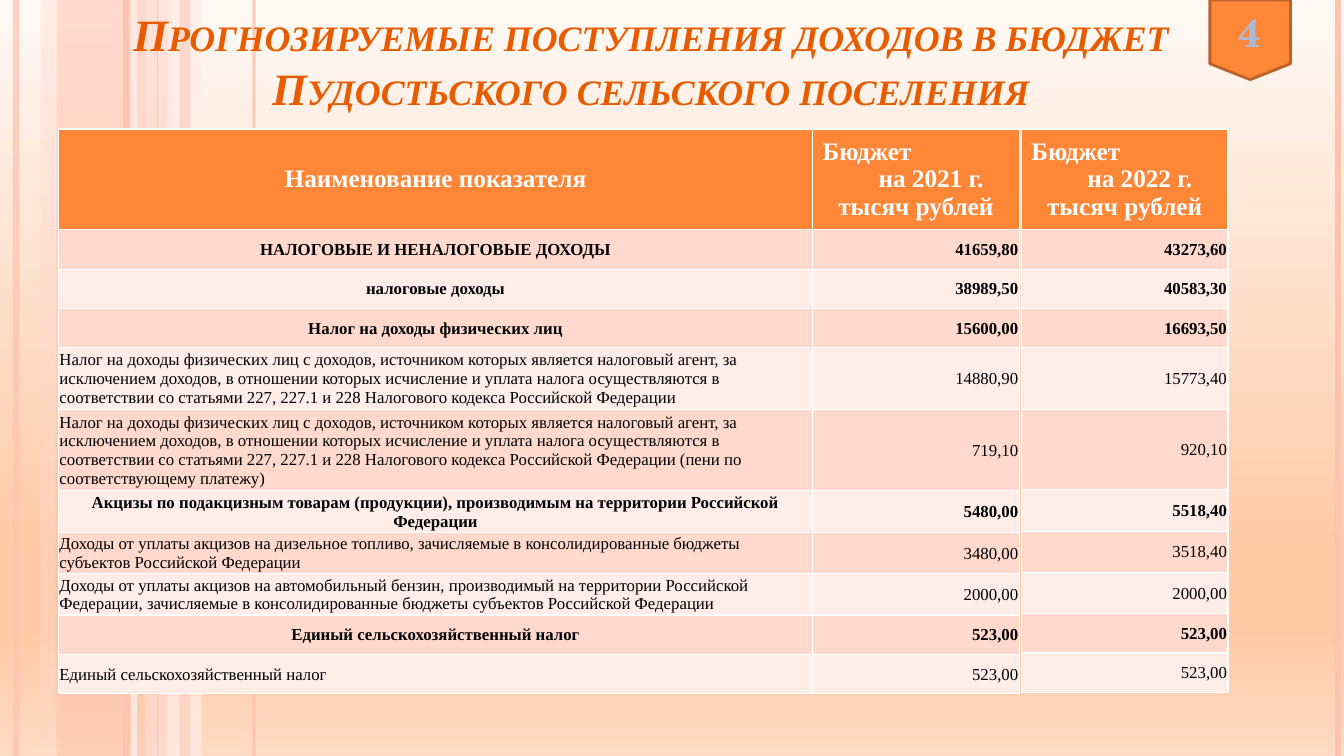
from pptx import Presentation, oxml
from pptx.dml import color
from pptx.enum import shapes, text
from pptx.oxml import ns
from pptx.util import Inches, Pt

COLORS = {
    "orange": "FE8637", "title": "E75C01", "edge": "BC6329", "number": "AEBAD5",
    "rose": "FEC3AE", "pink": "FFD9CE", "pale": "FFEDE8", "white": "FFFFFF", "black": "000000",
}
GRADIENT = [(0, "FFF9F5"), (74, "FFC9A5"), (83, "FFC9A5"), (100, "FFDBC3")]
BANDS = [
    (0.56, 0.89, "rose", 54), (0.4, 0.15, "pink", 36), (1.44, 0.27, "pink", 70),
    (1.66, 0.34, "pale", 71),
]
STRIPES = [
    (0.16, "rose", 4.5, 73), (1.33, "pale", 4.5, 83), (1.25, "rose", 4.5, 100),
    (2.52, "rose", 2.25, 82), (1.56, "rose", 0.75, 100), (13.27, "rose", 4.5, 100),
]
FRONT_BAND = (1.78, 0.11, "rose", 51)
SERIF = "Times New Roman"
LEFT, CENTER, RIGHT = text.PP_ALIGN.LEFT, text.PP_ALIGN.CENTER, text.PP_ALIGN.RIGHT
AGENT_TAX = (
    "Налог на доходы физических лиц с доходов, источником которых является налоговый агент, "
    "за исключением доходов, в отношении которых исчисление и уплата налога осуществляются "
    "в соответствии со статьями 227, 227.1 и 228 Налогового кодекса Российской Федерации"
)
FARM_TAX = "Единый сельскохозяйственный налог"
HEADER_HEIGHT = 0.93
INCOME = [
    (0.39, True, "НАЛОГОВЫЕ И НЕНАЛОГОВЫЕ ДОХОДЫ", "41659,80", "43273,60"),
    (0.39, True, "налоговые доходы", "38989,50", "40583,30"),
    (0.39, True, "Налог на доходы физических лиц", "15600,00", "16693,50"),
    (0.61, False, AGENT_TAX, "14880,90", "15773,40"),
    (0.8, False, AGENT_TAX + " (пени по соответствующему платежу)", "719,10", "920,10"),
    (0.41, True, "Акцизы по подакцизным товарам (продукции), производимым на территории "
     "Российской Федерации", "5480,00", "5518,40"),
    (0.41, False, "Доходы от уплаты акцизов на дизельное топливо, зачисляемые в "
     "консолидированные бюджеты субъектов Российской Федерации", "3480,00", "3518,40"),
    (0.41, False, "Доходы от уплаты акцизов на автомобильный бензин, производимый на "
     "территории Российской Федерации, зачисляемые в консолидированные бюджеты субъектов "
     "Российской Федерации", "2000,00", "2000,00"),
    (0.39, True, FARM_TAX, "523,00", "523,00"),
    (0.39, False, FARM_TAX, "523,00", "523,00"),
]


def rgb(name):
    """Return the named colour."""
    return color.RGBColor.from_string(COLORS[name])


def apply(target, values):
    """Set every attribute in a dict of format values."""
    for name, value in values.items():
        setattr(target, name, value)


def add_element(parent, tag, index=None, **attributes):
    """Put a new XML element into its parent and return it."""
    element = oxml.parse_xml(f"<{tag} {ns.nsdecls('a')}/>")
    for name, value in attributes.items():
        element.set(name, str(value))
    parent.insert(len(parent) if index is None else index, element)
    return element


def set_opacity(element, percent):
    """Make the solid colour of an element partly transparent."""
    if percent < 100:
        add_element(next(element.iter(ns.qn("a:srgbClr"))), "a:alpha", val=percent * 1000)


def paint_background(slide):
    """Fill the slide with the vertical gradient."""
    fill = slide.background.fill
    fill.gradient()
    fill.gradient_angle = 270
    stops = next(slide.element.iter(ns.qn("a:gsLst")))
    stops.clear()
    for position, value in GRADIENT:
        stop = add_element(stops, "a:gs", pos=position * 1000)
        add_element(stop, "a:srgbClr", val=value)


def add_band(slide, left, width, fill, opacity):
    """Add a full-height translucent band."""
    shape = slide.shapes.add_shape(
        shapes.MSO_SHAPE.RECTANGLE, Inches(left), 0, Inches(width), Inches(7.5))
    shape.shadow.inherit = False
    shape.fill.solid()
    shape.fill.fore_color.rgb = rgb(fill)
    shape.line.fill.background()
    set_opacity(shape.element.spPr, opacity)


def add_stripe(slide, x, line_color, width, opacity):
    """Add a full-height vertical line."""
    connector = slide.shapes.add_connector(
        shapes.MSO_CONNECTOR.STRAIGHT, Inches(x), 0, Inches(x), Inches(7.5))
    connector.line.color.rgb = rgb(line_color)
    connector.line.width = Pt(width)
    set_opacity(connector.element.spPr, opacity)
    add_element(connector.element.spPr, "a:effectLst")


def write(paragraph, content, align, font_color, **font_values):
    """Write one formatted run and return it."""
    paragraph.alignment = align
    run = paragraph.add_run()
    run.text = content
    apply(run.font, {"name": SERIF, **font_values})
    run.font.color.rgb = rgb(font_color)
    return run


def add_title(slide):
    """Add the small-caps heading."""
    shape = slide.shapes.add_textbox(Inches(0.91), 0, Inches(11.09), Inches(1.18))
    frame = shape.text_frame
    apply(frame, {"word_wrap": True, "vertical_anchor": text.MSO_ANCHOR.BOTTOM})
    run = write(
        frame.paragraphs[0],
        "Прогнозируемые поступления доходов в бюджет Пудостьского сельского поселения",
        CENTER, "title", size=Pt(32), bold=True, italic=True)
    run.font._element.set("cap", "small")


def add_page_badge(slide):
    """Add the page number tab."""
    shape = slide.shapes.add_shape(
        shapes.MSO_SHAPE.FLOWCHART_OFFPAGE_CONNECTOR,
        Inches(12), 0, Inches(0.8), Inches(0.79))
    shape.shadow.inherit = False
    shape.fill.solid()
    shape.fill.fore_color.rgb = rgb("orange")
    shape.line.color.rgb = rgb("edge")
    shape.line.width = Pt(2)
    shape.text_frame.vertical_anchor = text.MSO_ANCHOR.MIDDLE
    write(shape.text_frame.paragraphs[0], "4", CENTER, "number",
          name="TeX Gyre Schola", size=Pt(28), bold=True)


def style_cell(cell, fill):
    """Fill a cell, centre it vertically and draw its white borders."""
    cell.vertical_anchor = text.MSO_ANCHOR.MIDDLE
    cell.fill.solid()
    cell.fill.fore_color.rgb = rgb(fill)
    properties = cell._tc.get_or_add_tcPr()
    for index, side in enumerate("LRTB"):
        border = add_element(properties, f"a:ln{side}", index, w=Pt(1))
        add_element(add_element(border, "a:solidFill"), "a:srgbClr", val=COLORS["white"])


def fill_header(cell, lines):
    """Write the header lines, each with its alignment and left indent."""
    style_cell(cell, "orange")
    for index, (content, align, indent) in enumerate(lines):
        frame = cell.text_frame
        paragraph = frame.add_paragraph() if index else frame.paragraphs[0]
        write(paragraph, content, align, "white", size=Pt(18), bold=True)
        if indent:
            paragraph._p.get_or_add_pPr().set("marL", str(Inches(indent)))


def year_header(year):
    """Return the header lines of a budget column."""
    return [("Бюджет", LEFT, 0), (f"на {year} г.", CENTER, 0.3), ("тысяч рублей", CENTER, 0)]


def add_income_table(slide, left, widths, headers, fields):
    """Add a table with the chosen fields of the income rows."""
    heights = [HEADER_HEIGHT] + [row[0] for row in INCOME]
    table = slide.shapes.add_table(
        len(heights), len(widths), Inches(left), Inches(1.28),
        Inches(sum(widths)), Inches(sum(heights))).table
    apply(table, {"first_row": False, "horz_banding": False})
    for row, height in zip(table.rows, heights):
        row.height = Inches(height)
    margins = dict.fromkeys(("margin_left", "margin_right", "margin_top"), Inches(0.01))
    for column, (width, header, field) in enumerate(zip(widths, headers, fields)):
        table.columns[column].width = Inches(width)
        fill_header(table.cell(0, column), header)
        for index, income in enumerate(INCOME, 1):
            cell, bold = table.cell(index, column), income[1]
            style_cell(cell, "pink" if index % 2 else "pale")
            apply(cell, {**margins, "margin_bottom": 0})
            align = RIGHT if field > 2 else CENTER if bold else LEFT
            write(cell.text_frame.paragraphs[0], income[field], align, "black",
                  size=Pt(12), bold=bold)


def main():
    """Build the budget income slide."""
    presentation = Presentation()
    apply(presentation, {"slide_width": Inches(13.33), "slide_height": Inches(7.5)})
    slide = presentation.slides.add_slide(presentation.slide_layouts[6])
    paint_background(slide)
    for band in BANDS:
        add_band(slide, *band)
    for stripe in STRIPES:
        add_stripe(slide, *stripe)
    add_band(slide, *FRONT_BAND)
    add_title(slide)
    name_header = [("Наименование показателя", CENTER, 0)]
    add_income_table(slide, 0.58, [7.48, 2.05], [name_header, year_header(2021)], [2, 3])
    add_page_badge(slide)
    add_income_table(slide, 10.13, [2.05], [year_header(2022)], [4])
    presentation.save("out.pptx")


if __name__ == "__main__":
    main()
